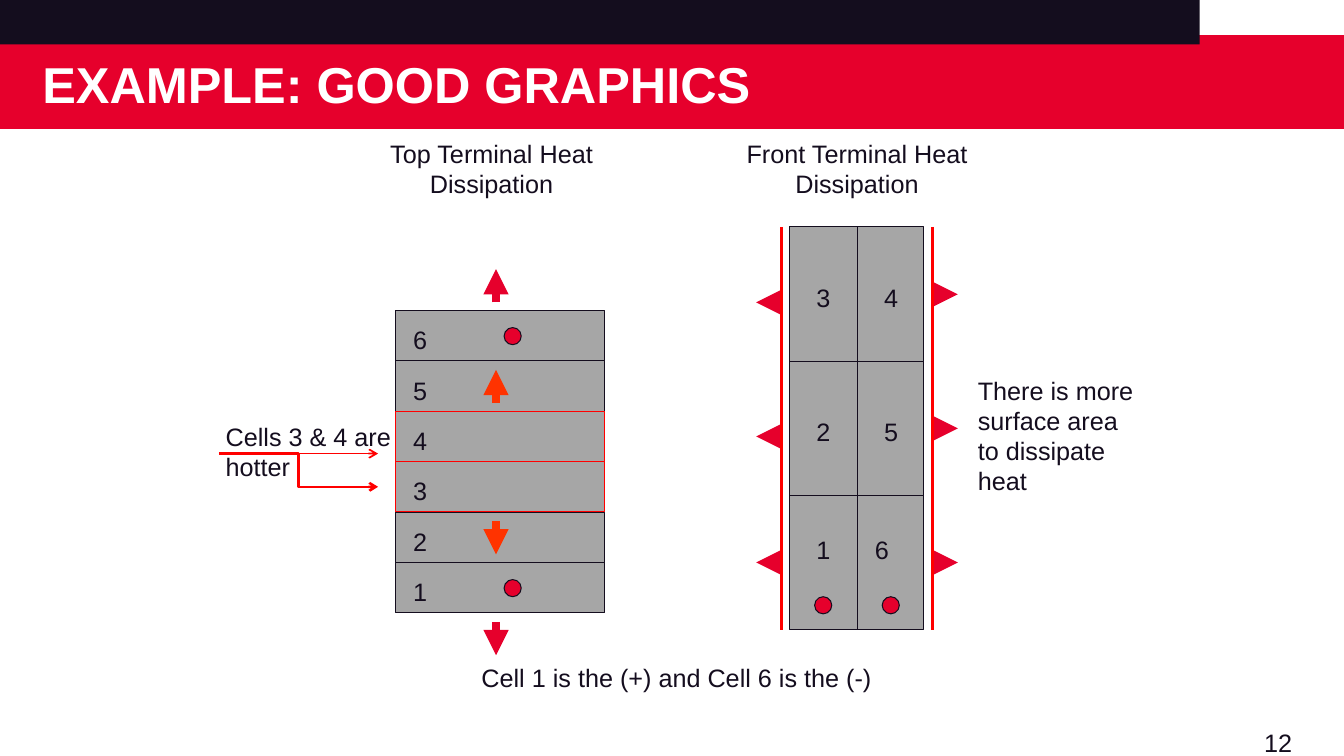
from lxml import etree
from pptx import Presentation
from pptx import util as u
from pptx.dml.color import RGBColor
from pptx.enum import shapes, text
from pptx.oxml import ns

INK = RGBColor(0x14, 0x0D, 0x1E)
RED = RGBColor(0xE6, 0x00, 0x2C)
HOT = RGBColor(0xFF, 0x00, 0x00)
ORANGE = RGBColor(0xFF, 0x33, 0x00)
GREY = RGBColor(0xA6, 0xA6, 0xA6)
WHITE = RGBColor(0xFF, 0xFF, 0xFF)
LEFT, CENTER = text.PP_ALIGN.LEFT, text.PP_ALIGN.CENTER
RECT, OVAL = shapes.MSO_SHAPE.RECTANGLE, shapes.MSO_SHAPE.OVAL
STRAIGHT, ELBOW = shapes.MSO_CONNECTOR.STRAIGHT, shapes.MSO_CONNECTOR.ELBOW

TITLE = "EXAMPLE: GOOD GRAPHICS"
BANDS = [((0, 0.35, 13.33, 0.93), RED), ((0, 0, 11.9, 0.44), INK)]
NOTES = [
    ("12", (12.44, 7.17, 0.89, 0.33), LEFT),
    ("Front Terminal Heat Dissipation", (7.06, 1.32, 2.88, 0.91), CENTER),
    ("Top Terminal Heat Dissipation", (3.75, 1.32, 2.25, 0.91), CENTER),
    ("Cells 3 & 4 are hotter", (2.14, 4.13, 2.33, 0.71), LEFT),
    ("Cell 1 is the (+) and Cell 6 is the (-)", (3.42, 6.52, 6.58, 0.5), CENTER),
    ("There is more surface area to dissipate heat", (9.6, 3.67, 1.76, 1.31), LEFT),
]
HOT_POINTERS = [
    (ELBOW, (2.17, 4.5), (3.75, 4.83), 1.75),
    (STRAIGHT, (2.92, 4.5), (3.75, 4.5), 1.25),
]
STACK_ORDER = [6, 1, 2, 5, 3, 4]
HOT_CELLS = {3, 4}
STACK_X, STACK_BOTTOM, CELL_W, CELL_H = 3.92, 6.08, 2.08, 0.5
STACK_DOTS = [(5, 5.75), (5, 3.25)]
STACK_FLOW = [(6.17, 0.33, RED), (5.17, 0.33, ORANGE), (3, -0.33, RED), (4, -0.33, ORANGE)]

BLOCK_X, BLOCK_TOP, BLOCK, BLOCK_ROWS = 7.83, 2.25, 1.33, 3
BLOCK_BOTTOM = 6.25
FRONT_DOTS = [(8.08, 5.92), (8.75, 5.92)]
FRONT_LABELS = [("1", 8, 5.25), ("2", 8, 4.08), ("3", 8, 2.75),
                ("4", 8.67, 2.75), ("5", 8.67, 4.08), ("6", 8.58, 5.25)]
FRONT_FLOW = [(7.75, -0.25, (3, 4.33, 5.58)), (9.33, 0.17, (2.92, 4.25, 5.58))]


def apply(target, **values):
    for name, value in values.items():
        setattr(target, name, value)


def add_box(parent, kind, box, fill, line=None):
    sp = parent.shapes.add_shape(kind, *map(u.Inches, box))
    sp.shadow.inherit = False
    sp.fill.solid()
    sp.fill.fore_color.rgb = fill
    if line is None:
        sp.line.fill.background()
    else:
        sp.line.color.rgb = line
        sp.line.width = u.Pt(0.75)
    return sp


def add_line(parent, kind, start, end, color, width, head=None):
    c = parent.shapes.add_connector(kind, *map(u.Inches, (*start, *end)))
    c.line.color.rgb = color
    c.line.width = u.Pt(width)
    props = c.element.spPr
    if head:
        etree.SubElement(props.find(ns.qn("a:ln")), ns.qn("a:tailEnd"), type=head)
    etree.SubElement(props, ns.qn("a:effectLst"))


def add_text(parent, words, box, align=LEFT):
    tf = parent.shapes.add_textbox(*map(u.Inches, box)).text_frame
    tf.word_wrap = True
    p = tf.paragraphs[0]
    p.text = words
    p.alignment = align
    apply(p.font, name="Arial", size=u.Pt(18))
    p.font.color.rgb = INK


def add_dots(parent, spots):
    for x, y in spots:
        add_box(parent, OVAL, (x, y, 0.17, 0.17), RED, INK)


def add_title(s):
    title = s.shapes.title
    for box, color in BANDS:
        title.element.addprevious(add_box(s, RECT, box, color).element)
    names = ("left", "top", "width", "height")
    apply(title, **dict(zip(names, map(u.Inches, (0.42, 0.44, 11.48, 0.84)))))
    tf = title.text_frame
    apply(tf, word_wrap=True, vertical_anchor=text.MSO_ANCHOR.MIDDLE,
          margin_left=0, margin_top=0, margin_bottom=0, margin_right=u.Inches(0.1))
    p = tf.paragraphs[0]
    apply(p, text=TITLE, alignment=LEFT, line_spacing=0.92)
    apply(p.font, name="Arial", size=u.Pt(36), bold=True)
    p.font.color.rgb = WHITE


def add_stack(s):
    stack = s.shapes.add_group_shape()
    for cell in STACK_ORDER:
        top = STACK_BOTTOM - cell * CELL_H
        add_box(stack, RECT, (STACK_X, top, CELL_W, CELL_H), GREY,
                HOT if cell in HOT_CELLS else INK)
    add_dots(stack, STACK_DOTS)
    for y, dy, color in STACK_FLOW:
        add_line(stack, STRAIGHT, (4.92, y), (4.92, y + dy), color, 6, "triangle")
    for cell in sorted(STACK_ORDER):
        add_text(stack, str(cell), (4, STACK_BOTTOM - cell * CELL_H + 0.09, 0.33, 0.5))


def add_front(s):
    front = s.shapes.add_group_shape()
    for x, dx, heights in FRONT_FLOW:
        for y in heights:
            add_line(front, STRAIGHT, (x, y), (x + dx, y), RED, 6, "triangle")
    pitch = (BLOCK_BOTTOM - BLOCK_TOP) / BLOCK_ROWS
    for row in range(BLOCK_ROWS):
        add_box(front, RECT, (BLOCK_X, BLOCK_TOP + row * pitch, BLOCK, pitch), GREY, INK)
    for x, color, width in [(8.5, INK, 0.75), (9.25, HOT, 2), (7.75, HOT, 2)]:
        add_line(front, STRAIGHT, (x, BLOCK_TOP), (x, BLOCK_BOTTOM), color, width)
    add_dots(front, FRONT_DOTS)
    for label, x, y in FRONT_LABELS:
        add_text(front, label, (x, y, 0.33, 0.5))


def main():
    prs = Presentation()
    apply(prs, slide_width=u.Inches(13.33), slide_height=u.Inches(7.5))
    s = prs.slides.add_slide(prs.slide_layouts[5])
    add_title(s)
    for words, box, align in NOTES:
        add_text(s, words, box, align)
    for kind, start, end, width in HOT_POINTERS:
        add_line(s, kind, start, end, HOT, width, "arrow")
    add_stack(s)
    add_front(s)
    prs.save("out.pptx")


if __name__ == "__main__":
    main()
